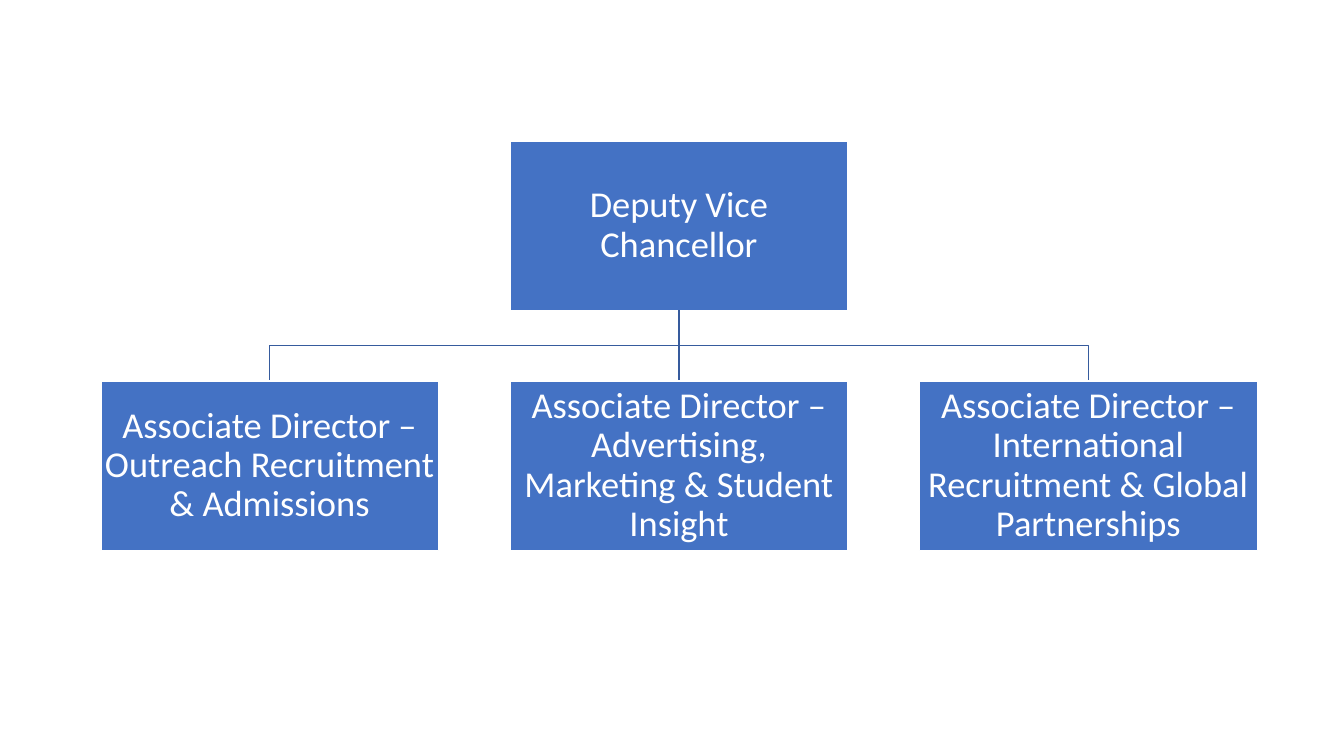
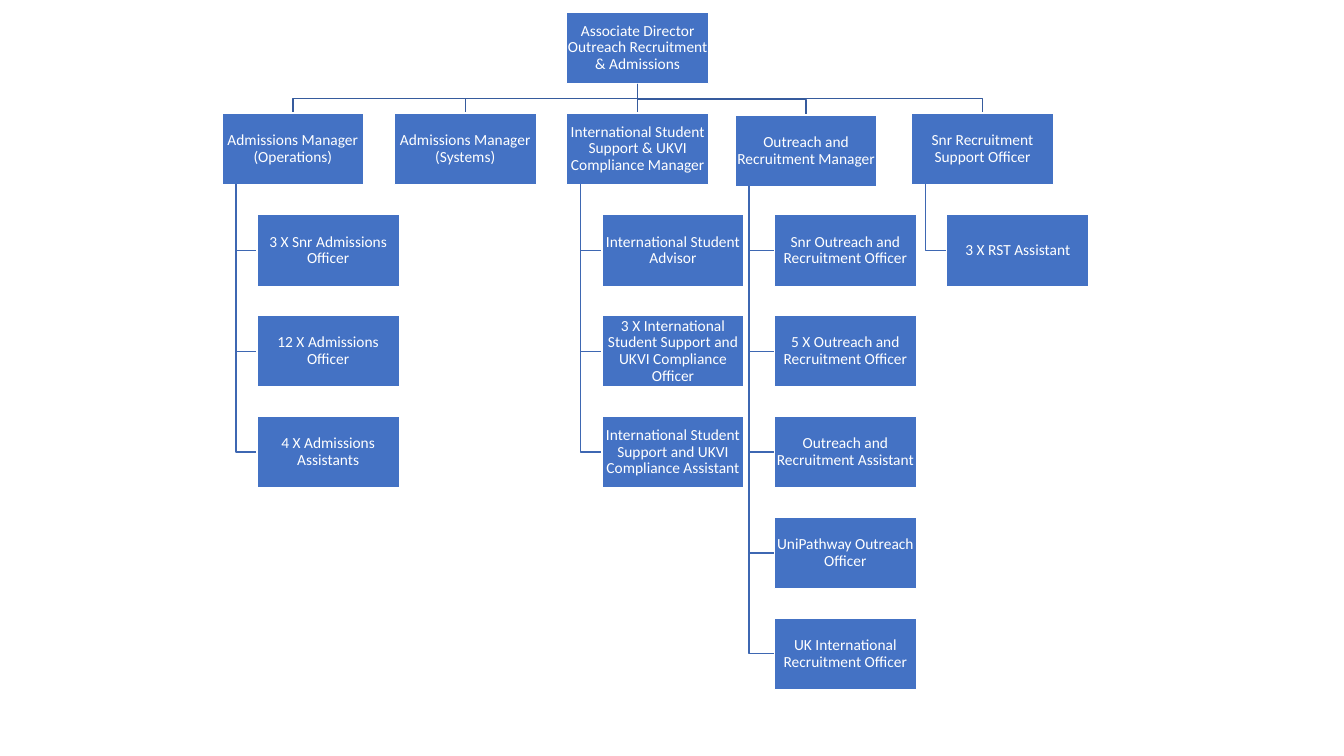
from dataclasses import dataclass

from lxml import etree
from pptx import Presentation
from pptx.dml.color import RGBColor
from pptx.enum.shapes import MSO_CONNECTOR as CONNECTOR, MSO_SHAPE as SHAPE
from pptx.enum.text import MSO_ANCHOR as ANCHOR, PP_ALIGN as ALIGN
from pptx.oxml.ns import qn
from pptx.util import Inches, Pt


@dataclass(frozen=True)
class Theme:
    font: str = "Calibri"
    box: RGBColor = RGBColor(0x44, 0x72, 0xC4)
    white: RGBColor = RGBColor(0xFF, 0xFF, 0xFF)
    branch: RGBColor = RGBColor(0x36, 0x5B, 0x9D)
    report: RGBColor = RGBColor(0x3E, 0x67, 0xB2)
    line: Pt = Pt(1)
    large: Pt = Pt(26)
    small: Pt = Pt(11)


@dataclass(frozen=True)
class BoxStyle:
    width: float
    height: float
    size: Pt
    inset: float


@dataclass(frozen=True)
class Box:
    x: float
    y: float
    style: BoxStyle

    @property
    def center_x(self):
        return self.x + self.style.width / 2

    @property
    def center_y(self):
        return self.y + self.style.height / 2

    @property
    def bottom(self):
        return self.y + self.style.height


THEME = Theme()
DIRECTOR_BOX = BoxStyle(3.35, 1.68, THEME.large, 0.02)
TEAM_BOX = BoxStyle(1.41, 0.71, THEME.small, 0.01)

CHANCELLOR = "Deputy Vice Chancellor"
DIRECTORS = [
    "Associate Director – Outreach Recruitment & Admissions",
    "Associate Director – Advertising, Marketing & Student Insight",
    "Associate Director – International Recruitment & Global Partnerships",
]

TEAM_HEAD = "Associate Director Outreach Recruitment & Admissions"
# Manager, offset of the manager's box from its slot, reports
TEAMS = [
    ("Admissions Manager (Operations)", (0, 0), [
        "3 X Snr Admissions Officer",
        "12 X Admissions Officer",
        "4 X Admissions Assistants",
    ]),
    ("Admissions Manager (Systems)", (0, 0), []),
    ("International Student Support & UKVI Compliance Manager", (0, 0), [
        "International Student Advisor",
        "3 X International Student Support and UKVI Compliance Officer",
        "International Student Support and UKVI Compliance Assistant",
    ]),
    ("Outreach and Recruitment Manager", (-0.04, 0.02), [
        "Snr Outreach and Recruitment Officer",
        "5 X Outreach and Recruitment Officer",
        "Outreach and Recruitment Assistant",
        "UniPathway Outreach Officer",
        "UK International Recruitment Officer",
    ]),
    ("Snr Recruitment Support Officer", (0, 0), ["3 X RST Assistant"]),
]

DIRECTOR_LEFT, DIRECTOR_STEP = 1, 4.06
CHANCELLOR_TOP, DIRECTOR_TOP = 1.4, 3.78

HEAD_LEFT, HEAD_TOP = 5.62, 0.12
MANAGER_TOP, MANAGER_STEP = 1.12, 1.71
REPORT_TOP, REPORT_STEP, REPORT_INDENT = 2.13, 1, 0.35
SPINE_INDENT = 0.14


def draw_box(slide, box, text):
    style = box.style
    sp = slide.shapes.add_shape(SHAPE.RECTANGLE, Inches(box.x), Inches(box.y),
                                Inches(style.width), Inches(style.height))
    sp.shadow.inherit = False
    sp.fill.solid()
    sp.fill.fore_color.rgb = THEME.box
    sp.line.color.rgb = THEME.white
    sp.line.width = THEME.line
    tf = sp.text_frame
    tf.word_wrap = True
    tf.vertical_anchor = ANCHOR.MIDDLE
    tf.margin_left = tf.margin_right = Inches(style.inset)
    tf.margin_top = tf.margin_bottom = Inches(style.inset)
    p = tf.paragraphs[0]
    p.text = text
    p.alignment = ALIGN.CENTER
    p.line_spacing = 0.9
    p.font.name = THEME.font
    p.font.size = style.size
    p.font.color.rgb = THEME.white


def draw_link(slide, points, color):
    """Draw a straight connector for two points, or an open bent line for more."""
    points = [(Inches(x), Inches(y)) for x, y in points]
    if len(points) == 2:
        sp = slide.shapes.add_connector(CONNECTOR.STRAIGHT, *points[0], *points[1])
        etree.SubElement(sp.element.spPr, qn("a:effectLst"))
    else:
        builder = slide.shapes.build_freeform(*points[0])
        builder.add_line_segments(points[1:], close=False)
        sp = builder.convert_to_shape()
        sp.shadow.inherit = False
        sp.fill.background()
    sp.line.color.rgb = color
    sp.line.width = THEME.line


def link_below(slide, parent, child):
    start = (parent.center_x, parent.bottom)
    end = (child.center_x, child.y)
    bend_y = (parent.bottom + child.y) / 2
    bends = []
    if abs(start[0] - end[0]) > 0.01:
        bends = [(start[0], bend_y), (end[0], bend_y)]
    draw_link(slide, [start, *bends, end], THEME.branch)


def link_beside(slide, manager, report):
    spine_x = manager.x + SPINE_INDENT
    draw_link(slide, [(spine_x, manager.bottom), (spine_x, report.center_y),
                      (report.x, report.center_y)], THEME.report)


def directors_slide(slide):
    top = Box(DIRECTOR_LEFT + DIRECTOR_STEP, CHANCELLOR_TOP, DIRECTOR_BOX)
    draw_box(slide, top, CHANCELLOR)
    for i, text in enumerate(DIRECTORS):
        director = Box(DIRECTOR_LEFT + i * DIRECTOR_STEP, DIRECTOR_TOP, DIRECTOR_BOX)
        link_below(slide, top, director)
        draw_box(slide, director, text)


def teams_slide(slide):
    head = Box(HEAD_LEFT, HEAD_TOP, TEAM_BOX)
    draw_box(slide, head, TEAM_HEAD)
    for i, (title, (dx, dy), reports) in enumerate(TEAMS):
        slot_x = HEAD_LEFT + (i - len(TEAMS) // 2) * MANAGER_STEP
        manager = Box(slot_x + dx, MANAGER_TOP + dy, TEAM_BOX)
        link_below(slide, head, manager)
        draw_box(slide, manager, title)
        for row, text in enumerate(reports):
            report = Box(slot_x + REPORT_INDENT, REPORT_TOP + row * REPORT_STEP, TEAM_BOX)
            link_beside(slide, manager, report)
            draw_box(slide, report, text)


def main():
    prs = Presentation()
    prs.slide_width, prs.slide_height = Inches(13.33), Inches(7.5)
    blank = prs.slide_layouts[6]
    for build in (directors_slide, teams_slide):
        build(prs.slides.add_slide(blank))
    prs.save("out.pptx")


if __name__ == "__main__":
    main()
